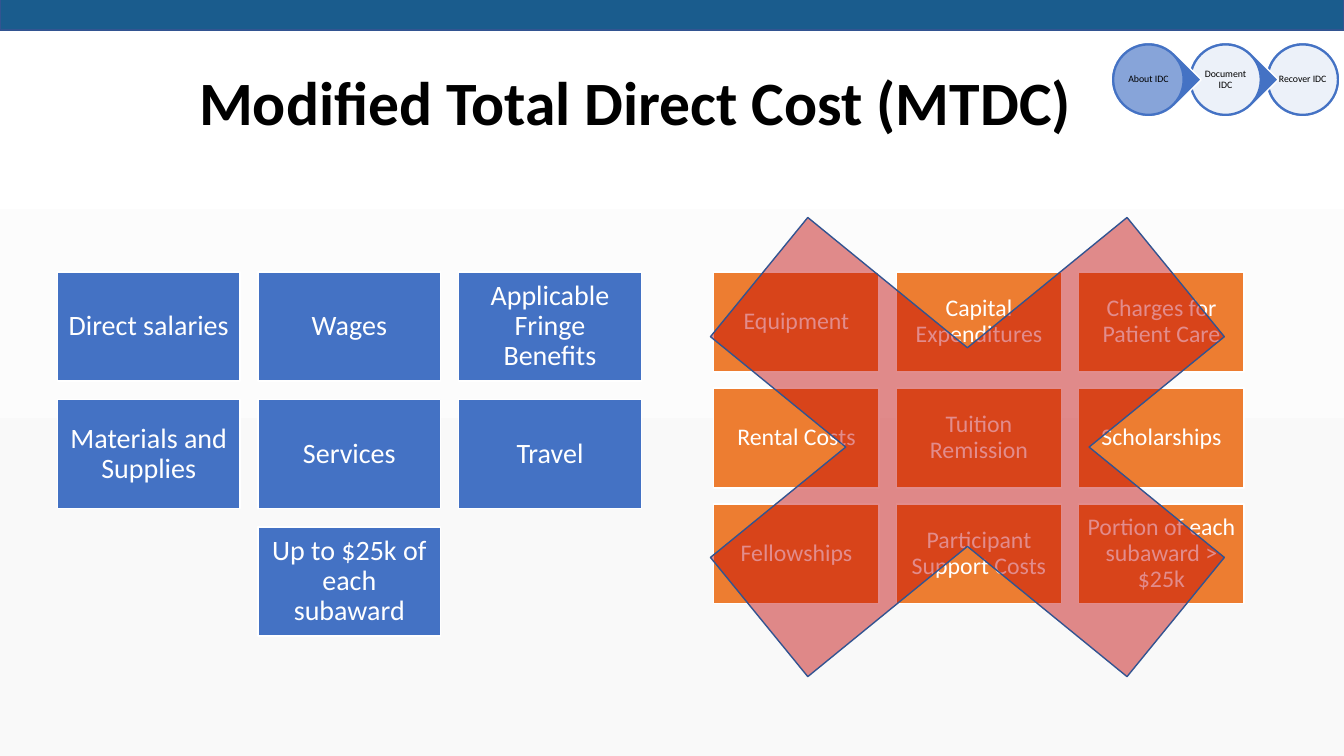
from lxml import etree
from pptx import Presentation
from pptx import util as u
from pptx.dml import color
from pptx.enum import shapes, text
from pptx.oxml import ns

KINDS = shapes.MSO_SHAPE
BLUE, ORANGE, WHITE, BLACK = "4472C4", "ED7D31", "FFFFFF", "000000"
NAVY = "325491"

ALLOWED = [
    ["Direct salaries", "Wages", "Applicable Fringe Benefits"],
    ["Materials and Supplies", "Services", "Travel"],
    ["Up to $25k of each subaward"],
]
EXCLUDED = [
    ["Equipment", "Capital Expenditures", "Charges for Patient Care"],
    ["Rental Costs", "Tuition Remission", "Scholarships"],
    ["Fellowships", "Participant Support Costs", "Portion of each subaward > $25k"],
]
STEPS = ["About IDC", "Document IDC", "Recover IDC"]


def paint(value):
    return color.RGBColor.from_string(value)


def write(box, words, size=20, ink=WHITE, bold=False, inset=0.1,
          anchor=text.MSO_ANCHOR.MIDDLE, font="Calibri"):
    frame = box.text_frame
    frame.word_wrap = True
    frame.vertical_anchor = anchor
    frame.margin_left = frame.margin_right = u.Inches(inset)
    frame.margin_top = frame.margin_bottom = u.Inches(inset)
    para = frame.paragraphs[0]
    para.alignment = text.PP_ALIGN.CENTER
    para.line_spacing = 0.9
    span = para.add_run()
    span.text = words
    span.font.name = font
    span.font.size = u.Pt(size)
    span.font.bold = bold
    span.font.color.rgb = paint(ink)


class CostSlide:
    """Draws the parts of the direct cost slide on one page."""

    def __init__(self, page):
        self.page = page
        self.line_width = u.Pt(1)

    def backdrop(self, top, bottom):
        fill = self.page.background.fill
        fill.gradient()
        fill.gradient_angle = 270
        for stop, shade, position in zip(fill.gradient_stops, (top, bottom), (0, 0.83)):
            stop.color.rgb = paint(shade)
            stop.position = position

    def title(self, words, *place):
        box = self.page.shapes.add_textbox(*map(u.Inches, place))
        write(box, words, size=44, ink=BLACK, bold=True, inset=0.05,
              anchor=text.MSO_ANCHOR.TOP)

    def shape(self, kind, *place, fill, line=WHITE, opacity=100):
        box = self.page.shapes.add_shape(kind, *map(u.Inches, place))
        box.shadow.inherit = False
        box.fill.solid()
        box.fill.fore_color.rgb = paint(fill)
        box.line.color.rgb = paint(line)
        box.line.width = self.line_width
        if opacity < 100:
            shade = box.element.spPr.find(ns.qn("a:solidFill"))[0]
            etree.SubElement(shade, ns.qn("a:alpha"), val=str(opacity * 1000))
        return box

    def grid(self, rows, left, top, width, height, pitch_x, pitch_y, fill, size, inset):
        columns = max(map(len, rows))
        for row, labels in enumerate(rows):
            start = left + (columns - len(labels)) / 2 * pitch_x
            for column, label in enumerate(labels):
                box = self.shape(KINDS.RECTANGLE, start + column * pitch_x,
                                 top + row * pitch_y, width, height, fill=fill)
                write(box, label, size=size, inset=inset)

    def chain(self, labels, left, top, pitch, outer=0.74, inner=0.69):
        edge = (outer - inner) / 2
        for index, label in reversed(list(enumerate(labels))):
            x = left + index * pitch
            last = index == len(labels) - 1
            back = self.shape(KINDS.OVAL if last else KINDS.TEAR, x, top,
                              outer, outer, fill=BLUE)
            if not last:
                back.rotation = 45
            disc = self.shape(KINDS.OVAL, x + edge, top + edge, inner, inner,
                              fill=WHITE if index else "8FAADC", line=BLUE, opacity=90)
            write(disc, label, size=7, ink=BLACK, inset=0)


def main():
    deck = Presentation()
    deck.slide_width, deck.slide_height = u.Inches(13.33), u.Inches(7.5)
    slide = CostSlide(deck.slides.add_slide(deck.slide_layouts[6]))
    slide.backdrop(WHITE, "F9F9F9")
    slide.title("Modified Total Direct Cost (MTDC)", 0.94, 0.67, 10.73, 1.43)
    slide.shape(KINDS.RECTANGLE, 0, -0.03, 13.33, 0.33, fill="1A5C8D", line=NAVY)
    slide.grid(ALLOWED, 0.57, 2.7, 1.81, 1.08, 1.99, 1.265, BLUE, 20, 0.08)
    slide.grid(EXCLUDED, 7.08, 2.7, 1.64, 0.99, 1.81, 1.15, ORANGE, 17, 0.07)
    slide.shape(KINDS.MATH_MULTIPLY, 5.62, 1.19, 7.95, 6.49,
                fill="C00000", line=NAVY, opacity=45)
    slide.chain(STEPS, 11.02, 0.42, 0.765)
    deck.save("out.pptx")


if __name__ == "__main__":
    main()
